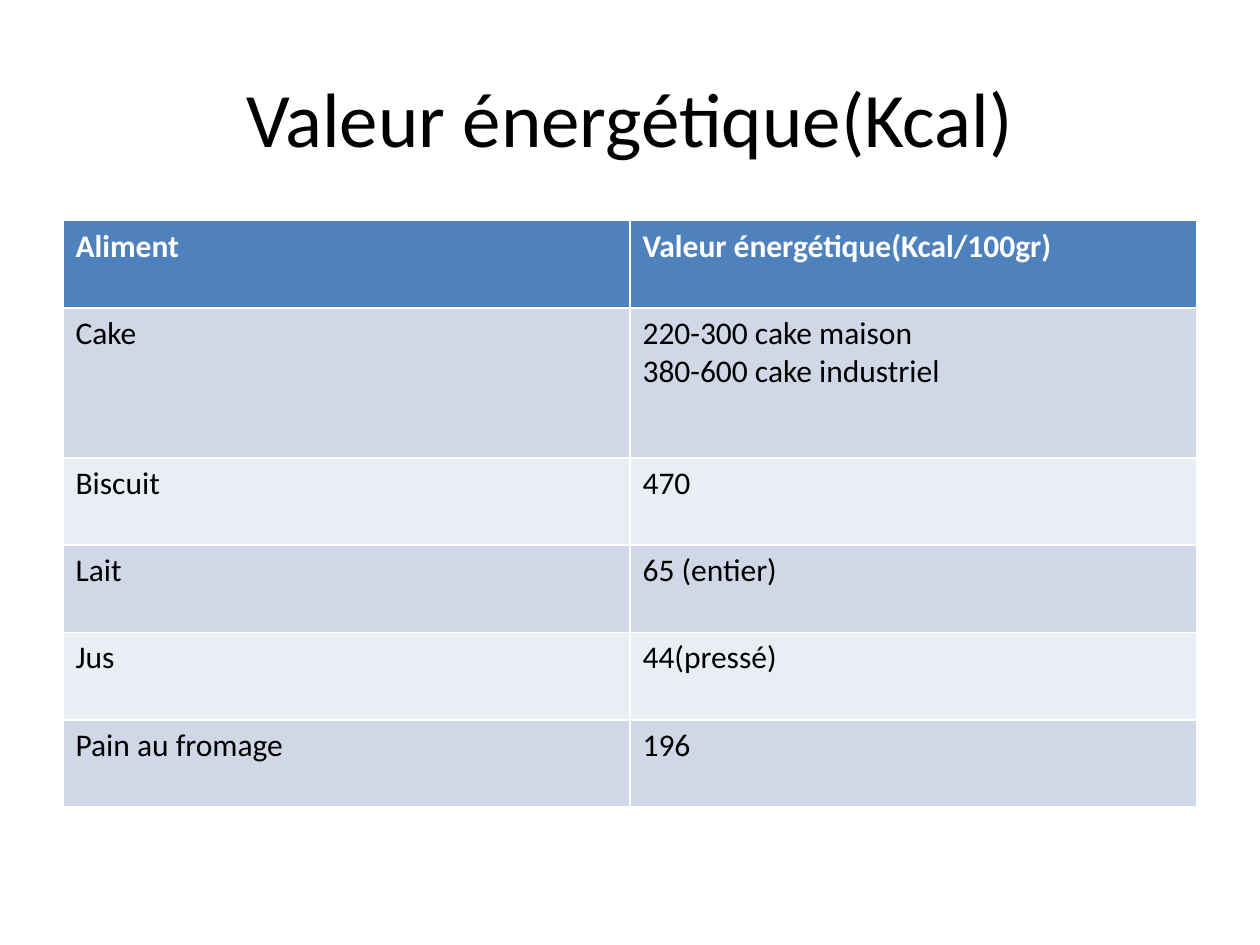
from pptx import Presentation
from pptx.dml.color import RGBColor
from pptx.enum.text import MSO_ANCHOR, PP_ALIGN
from pptx.util import Cm, Pt

MIDDLE, TOP = MSO_ANCHOR.MIDDLE, MSO_ANCHOR.TOP
LEFT, CENTER = PP_ALIGN.LEFT, PP_ALIGN.CENTER
BLACK = RGBColor(0x00, 0x00, 0x00)
WHITE = RGBColor(0xFF, 0xFF, 0xFF)
BLUE = RGBColor(0x4F, 0x81, 0xBD)
BANDS = RGBColor(0xE9, 0xED, 0xF4), RGBColor(0xD0, 0xD8, 0xE8)
FONT = "Calibri"
TITLE = "Valeur énergétique(Kcal)"
FOODS = [
    ("Aliment", "Valeur énergétique(Kcal/100gr)"),
    ("Cake", "220-300 cake maison\n380-600 cake industriel"),
    ("Biscuit", "470"),
    ("Lait", "65 (entier)"),
    ("Jus", "44(pressé)"),
    ("Pain au fromage", "196"),
]
ROW, TALL = 1.76, 3.02


def write(frame, text, size=18, color=BLACK, bold=False, align=LEFT):
    """Fill a text frame, one paragraph per line, in one format."""
    frame.text = text
    for para in frame.paragraphs:
        para.alignment = align
        for run in para.runs:
            font = run.font
            font.name, font.size, font.bold = FONT, Pt(size), bold
            font.color.rgb = color


def add_title(slide, left, top, width, height):
    """Place the slide title in the given box."""
    title = slide.shapes.title
    title.left, title.top = Cm(left), Cm(top)
    title.width, title.height = Cm(width), Cm(height)
    write(title.text_frame, TITLE, size=44, align=CENTER)
    title.text_frame.vertical_anchor = MIDDLE


def add_foods(slide, left, top, width):
    """Place the food table, with a taller row for two-line values."""
    heights = [TALL if "\n" in value else ROW for _, value in FOODS]
    cols = len(FOODS[0])
    table = slide.shapes.add_table(
        len(FOODS), cols, Cm(left), Cm(top), Cm(width), Cm(sum(heights))
    ).table
    for col in table.columns:
        col.width = Cm(width / cols)
    for i, (food, height) in enumerate(zip(FOODS, heights)):
        table.rows[i].height = Cm(height)
        head = i == 0
        for cell, text in zip(table.rows[i].cells, food):
            cell.fill.solid()
            cell.fill.fore_color.rgb = BLUE if head else BANDS[i % 2]
            cell.vertical_anchor = TOP
            write(cell.text_frame, text, color=WHITE if head else BLACK, bold=head)


def main():
    """Build and save the slide."""
    deck = Presentation()
    deck.slide_width, deck.slide_height = Cm(25.4), Cm(19.05)
    slide = deck.slides.add_slide(deck.slide_layouts[5])
    add_title(slide, 1.27, 0.76, 22.86, 3.18)
    add_foods(slide, 1.27, 4.45, 22.86)
    deck.save("out.pptx")


if __name__ == "__main__":
    main()
